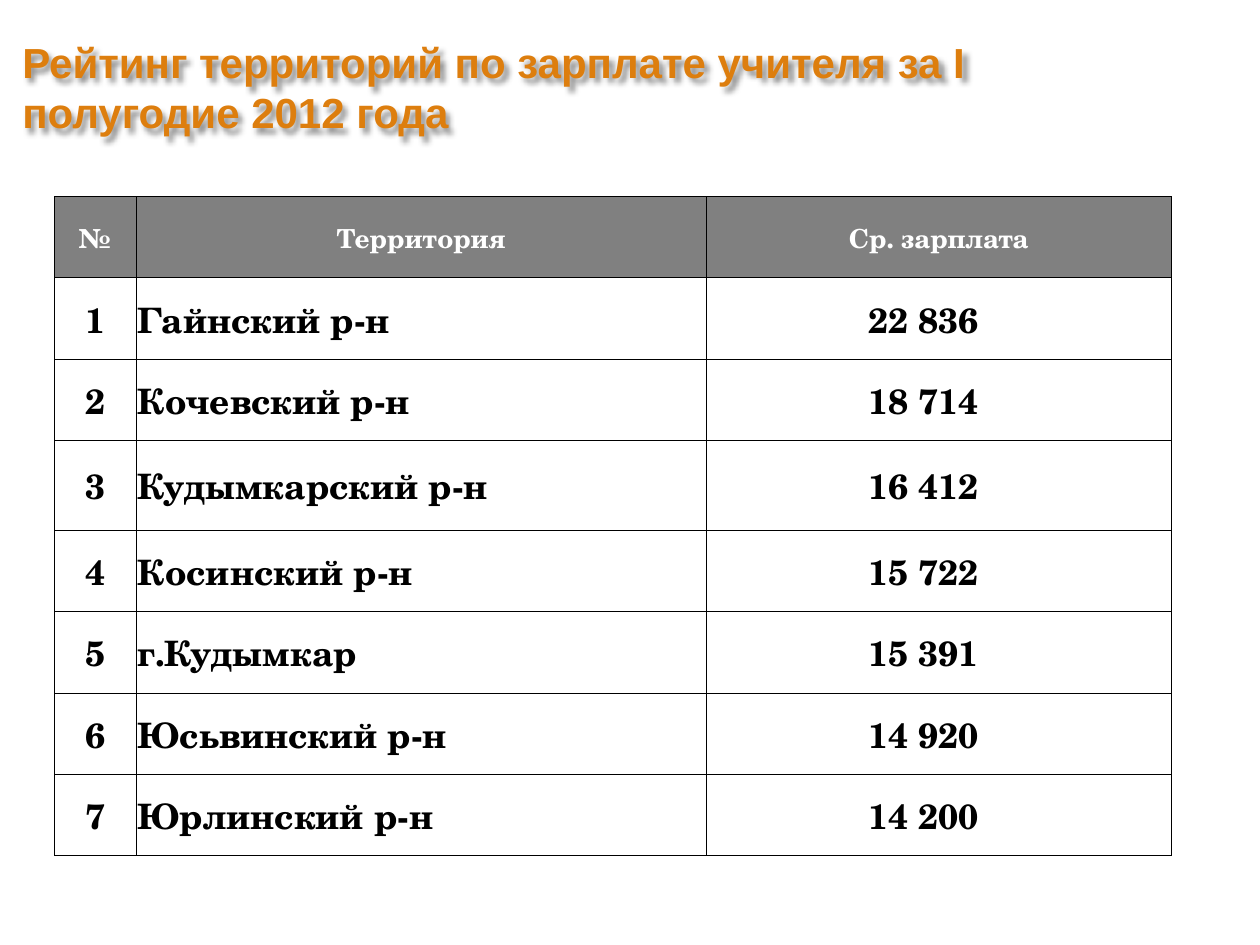
from lxml import etree
from pptx import Presentation
from pptx import oxml, util as u
from pptx.dml.color import RGBColor
from pptx.enum import text
from pptx.oxml import ns

ORANGE = RGBColor(0xDD, 0x7E, 0x0E)
GREY = RGBColor(0x80, 0x80, 0x80)
WHITE = RGBColor(0xFF, 0xFF, 0xFF)
BLACK = RGBColor(0, 0, 0)

TITLE = "Рейтинг территорий по зарплате учителя за I полугодие 2012 года"
HEAD = ("№", "Территория", "Ср. зарплата")
PAY = (
    ("Гайнский р-н", "22 836"),
    ("Кочевский р-н", "18 714"),
    ("Кудымкарский р-н", "16 412"),
    ("Косинский р-н", "15 722"),
    ("г.Кудымкар", "15 391"),
    ("Юсьвинский р-н", "14 920"),
    ("Юрлинский р-н", "14 200"),
)
COLS = (1.65, 11.48, 9.39)
ROW, TALL = 1.64, 1.81
MID, LEFT = text.PP_ALIGN.CENTER, text.PP_ALIGN.LEFT

SHADE = (
    f'<a:effectLst {ns.nsdecls("a")}><a:outerShdw blurRad="38100" dist="38100" '
    'dir="2700000" algn="tl"><a:srgbClr val="000000"><a:alpha val="43000"/>'
    '</a:srgbClr></a:outerShdw></a:effectLst>'
)


def style(font, size, face, color):
    """Set the format of a bold font."""
    for name, value in {"size": u.Pt(size), "name": face, "bold": True}.items():
        setattr(font, name, value)
    font.color.rgb = color


def title(slide, x, y, w, h):
    """Place the shadowed heading in the given box."""
    box = slide.shapes.add_textbox(u.Cm(x), u.Cm(y), u.Cm(w), u.Cm(h))
    box.fill.background()
    box._element.spPr.append(oxml.parse_xml(SHADE))
    frame = box.text_frame
    frame.word_wrap = True
    frame.vertical_anchor = text.MSO_ANCHOR.MIDDLE
    frame.text = TITLE
    style(frame.paragraphs[0].runs[0].font, 24, "Arial", ORANGE)


def border(cell):
    """Draw thin black lines on all sides of a cell."""
    props = cell._tc.get_or_add_tcPr()
    for side in "LRTB":
        line = etree.SubElement(props, ns.qn(f"a:ln{side}"), w=str(u.Pt(0.5)))
        fill = etree.SubElement(line, ns.qn("a:solidFill"))
        etree.SubElement(fill, ns.qn("a:srgbClr"), val=str(BLACK))


def fill(cell, words, size, color, align, right, back):
    """Write and format one cell."""
    border(cell)
    form = {
        "text": words,
        "vertical_anchor": text.MSO_ANCHOR.MIDDLE,
        "margin_left": u.Cm(0.02),
        "margin_top": u.Cm(0.02),
        "margin_right": u.Cm(right),
        "margin_bottom": 0,
    }
    for name, value in form.items():
        setattr(cell, name, value)
    if back is None:
        cell.fill.background()
    else:
        cell.fill.solid()
        cell.fill.fore_color.rgb = back
    para = cell.text_frame.paragraphs[0]
    para.alignment = align
    style(para.runs[0].font, size, "TeX Gyre Schola", color)


def table(slide, x, y):
    """Place the pay ranking with its top left corner at x, y."""
    rows = [HEAD] + [(str(n), *pair) for n, pair in enumerate(PAY, 1)]
    highs = [TALL if n == 3 else ROW for n in range(len(rows))]
    grid = slide.shapes.add_table(
        len(rows), len(COLS), u.Cm(x), u.Cm(y), u.Cm(sum(COLS)), u.Cm(sum(highs))
    ).table
    for col, wide in zip(grid.columns, COLS):
        col.width = u.Cm(wide)
    for r, (row, high) in enumerate(zip(rows, highs)):
        grid.rows[r].height = u.Cm(high)
        for c, words in enumerate(row):
            cell = grid.cell(r, c)
            if r == 0:
                fill(cell, words, 15, WHITE, MID, 0.02, GREY)
            else:
                align = LEFT if c == 1 else MID
                fill(cell, words, 20, BLACK, align, 0.64 if c == 2 else 0.02, None)


def main():
    """Build the slide and save it."""
    deck = Presentation()
    deck.slide_width, deck.slide_height = u.Cm(25.4), u.Cm(19.05)
    slide = deck.slides.add_slide(deck.slide_layouts[6])
    title(slide, 0.2, 0.5, 22.86, 2.5)
    table(slide, 1.1, 3.96)
    deck.save("out.pptx")


if __name__ == "__main__":
    main()
